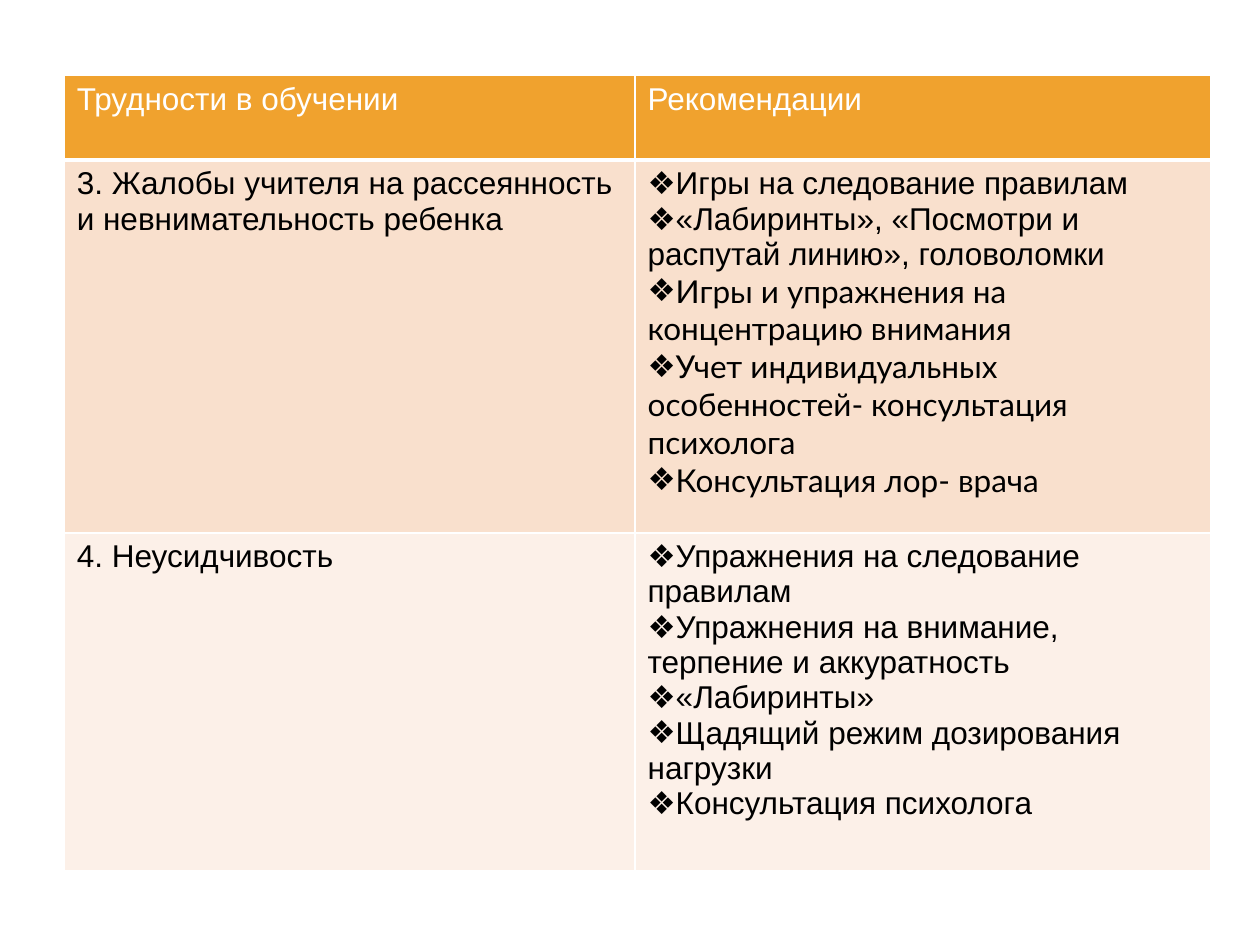
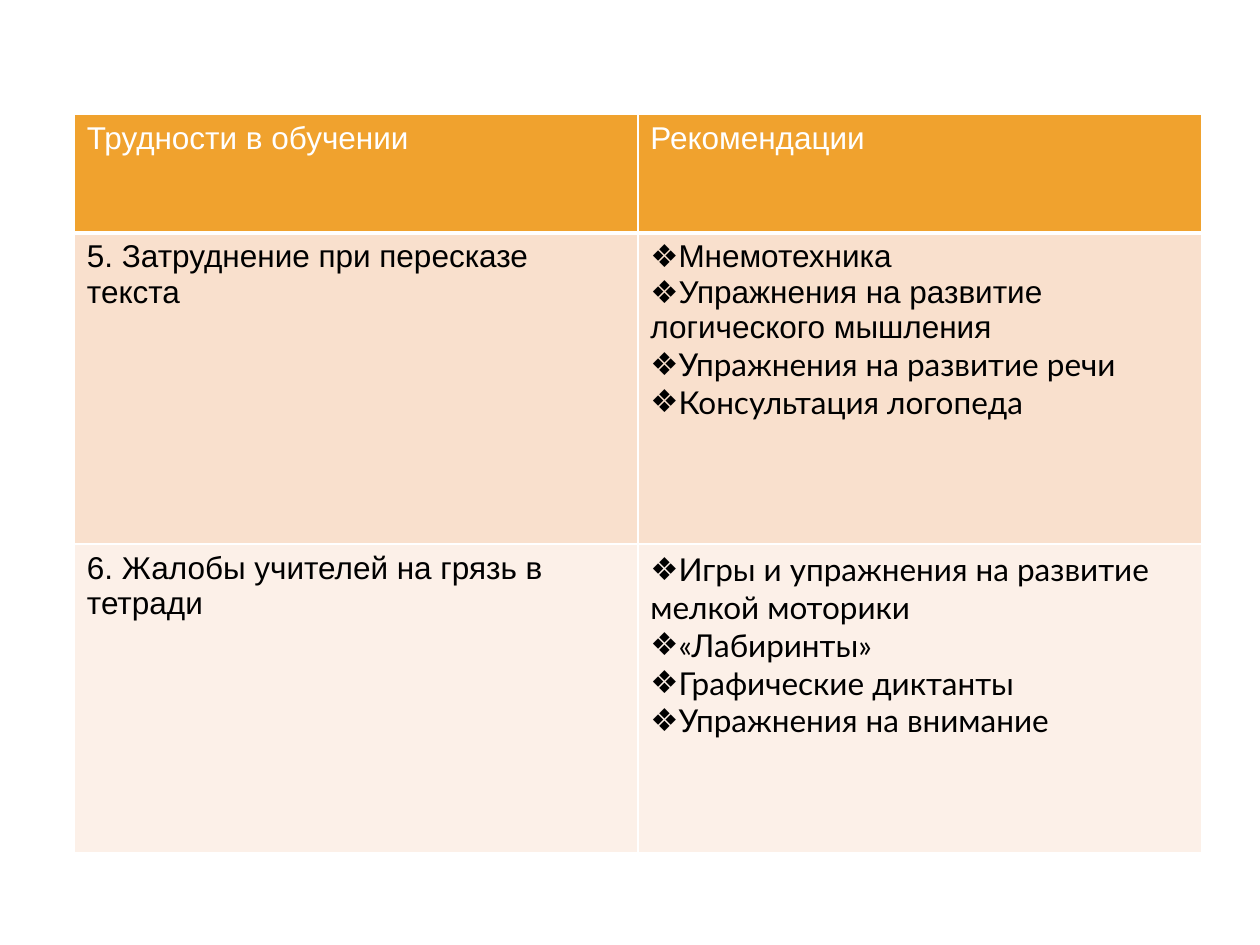
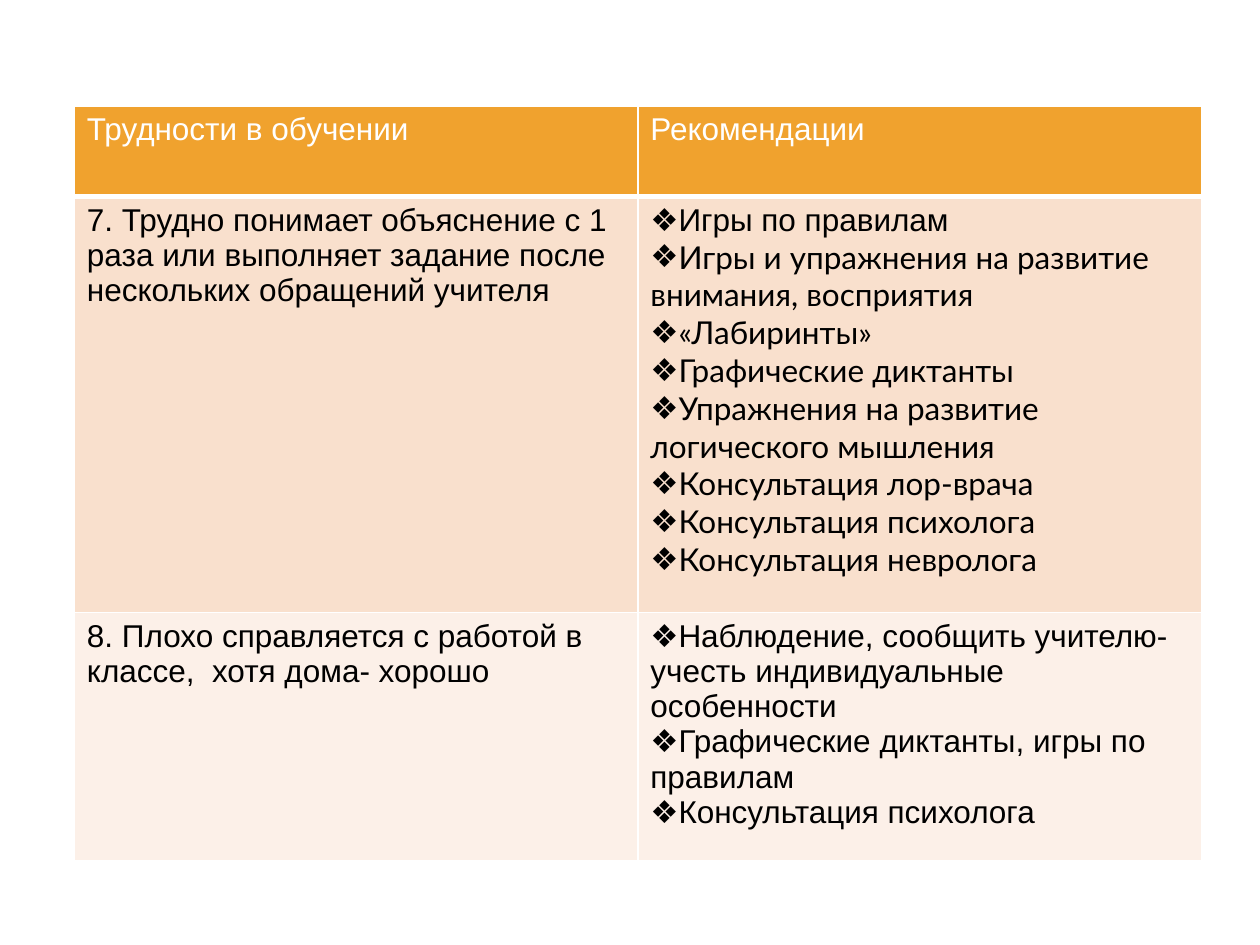
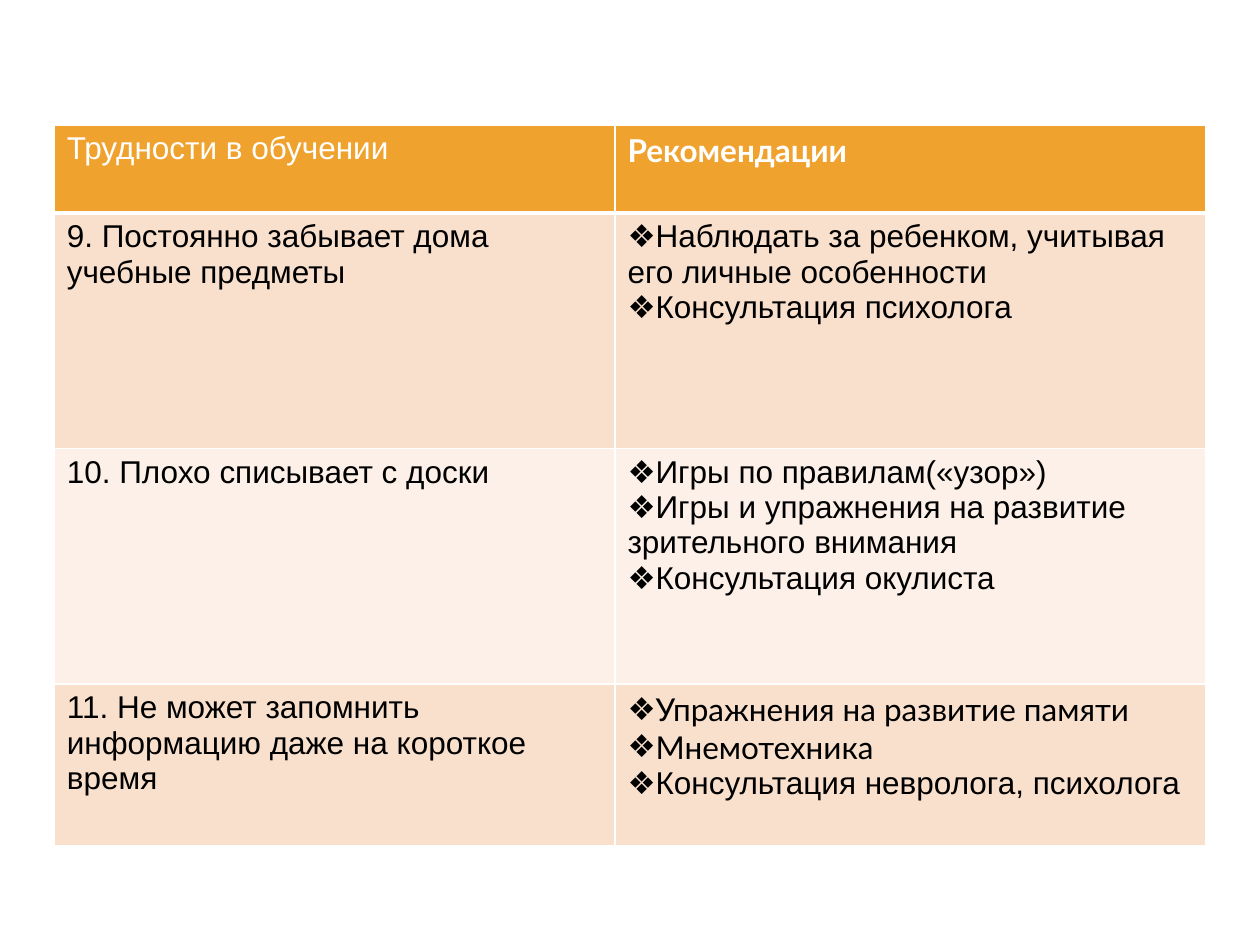
"""Build four slides of tables on learning difficulties and recommendations."""
from lxml import etree
from pptx import Presentation
from pptx.dml.color import RGBColor
from pptx.oxml.ns import qn
from pptx.util import Pt

ARIAL, LATO = "Arial", "Lato"
WHITE, BLACK = "FFFFFF", "000000"
HEADER, BANDS = "F0A22E", ("F9E0CD", "FCF0E8")
BULLET = "❖"
BLANK = 6

TABLES = [
    dict(left=36.7, top=43.2, cols=(326.2, 329), rows=(48.2, 213.1, 193), body=[
        ("3. Жалобы учителя на рассеянность и невнимательность ребенка", [
            (ARIAL, ["Игры на следование правилам",
                     "«Лабиринты», «Посмотри и распутай линию», головоломки"]),
            (LATO, ["Игры и упражнения на концентрацию внимания",
                    "Учет индивидуальных особенностей- консультация психолога",
                    "Консультация лор- врача"])]),
        ("4. Неусидчивость", [
            (ARIAL, ["Упражнения на следование правилам",
                     "Упражнения на внимание, терпение и аккуратность",
                     "«Лабиринты»",
                     "Щадящий режим дозирования нагрузки",
                     "Консультация психолога"])]),
    ]),
    dict(left=42.5, top=65.5, cols=(322, 322), rows=(67.7, 177.8, 176.4), body=[
        ("5. Затруднение при пересказе текста", [
            (ARIAL, ["Мнемотехника", "Упражнения на развитие логического мышления"]),
            (LATO, ["Упражнения на развитие речи", "Консультация логопеда"])]),
        ("6. Жалобы учителей на грязь в тетради", [
            (LATO, ["Игры и упражнения на развитие мелкой моторики",
                    "«Лабиринты»",
                    "Графические диктанты",
                    "Упражнения на внимание"])]),
    ]),
    dict(left=42.5, top=60.5, cols=(322, 322), rows=(51.8, 237.6, 141.8), body=[
        ("7. Трудно понимает объяснение с 1 раза или выполняет задание "
         "после нескольких обращений учителя", [
            (ARIAL, ["Игры по правилам"]),
            (LATO, ["Игры и упражнения на развитие внимания, восприятия",
                    "«Лабиринты»",
                    "Графические диктанты",
                    "Упражнения на развитие логического мышления",
                    "Консультация лор-врача",
                    "Консультация психолога",
                    "Консультация невролога"])]),
        ("8. Плохо справляется с работой в классе,  хотя дома- хорошо", [
            (ARIAL, ["Наблюдение, сообщить учителю- учесть индивидуальные особенности",
                     "Графические диктанты, игры по правилам",
                     "Консультация психолога"])]),
    ]),
    dict(left=31, top=71.3, cols=(320.4, 337.7), rows=(50.4, 134.6, 134.6, 92.2),
         heading=dict(font=LATO, bold=True), body=[
        ("9. Постоянно забывает дома учебные предметы", [
            (ARIAL, ["Наблюдать за ребенком, учитывая его личные особенности",
                     "Консультация психолога"])]),
        ("10. Плохо списывает с доски", [
            (ARIAL, ["Игры по правилам(«узор»)",
                     "Игры и упражнения на развитие зрительного внимания",
                     "Консультация окулиста"])]),
        ("11. Не может запомнить информацию даже на короткое время", [
            (LATO, ["Упражнения на развитие памяти", "Мнемотехника"]),
            (ARIAL, ["Консультация невролога, психолога"])]),
    ]),
]


def rgb(color):
    """Turn a hex string into a colour."""
    return RGBColor.from_string(color)


def write(p, text, font=ARIAL, size=18, color=BLACK, bold=False, bullet=None):
    """Write formatted text into a paragraph."""
    r = p.add_run()
    r.text = text
    r.font.name, r.font.size, r.font.bold = font, Pt(size), bold
    r.font.color.rgb = rgb(color)
    if bullet:
        pPr = p._p.get_or_add_pPr()
        etree.SubElement(pPr, qn("a:buFont"), typeface=ARIAL)
        etree.SubElement(pPr, qn("a:buChar"), char=bullet)


class Deck:
    """Hold the presentation, its style and the current slide."""

    def __init__(self):
        """Start a 10 by 7.5 inch presentation."""
        self.prs = Presentation()
        self.prs.slide_width, self.prs.slide_height = Pt(720), Pt(540)

    def slide(self):
        """Add a blank slide and make it current."""
        self.s = self.prs.slides.add_slide(self.prs.slide_layouts[BLANK])

    def cell(self, cell, fill, bottom=1):
        """Give a cell its white borders and its fill."""
        tcPr = cell._tc.get_or_add_tcPr()
        for side, width in dict(L=1, R=1, T=1, B=bottom).items():
            ln = etree.SubElement(tcPr, qn(f"a:ln{side}"), w=str(Pt(width)))
            solid = etree.SubElement(ln, qn("a:solidFill"))
            etree.SubElement(solid, qn("a:srgbClr"), val=WHITE)
        cell.fill.solid()
        cell.fill.fore_color.rgb = rgb(fill)
        return cell.text_frame

    def bullets(self, tf, groups):
        """Fill a text frame with bulleted items grouped by font."""
        items = [(font, text) for font, texts in groups for text in texts]
        for i, (font, text) in enumerate(items):
            p = tf.add_paragraph() if i else tf.paragraphs[0]
            write(p, text, font=font, bullet=BULLET)

    def table(self, left, top, cols, rows, body, heading=None):
        """Add a table of difficulties and recommendations."""
        table = self.s.shapes.add_table(
            len(rows), len(cols), Pt(left), Pt(top), Pt(sum(cols)), Pt(sum(rows))).table
        for col, width in zip(table.columns, cols):
            col.width = Pt(width)
        for row, height in zip(table.rows, rows):
            row.height = Pt(height)
        titles = (("Трудности в обучении", {}), ("Рекомендации", heading or {}))
        for i, (title, style) in enumerate(titles):
            tf = self.cell(table.cell(0, i), HEADER, bottom=3)
            write(tf.paragraphs[0], title, color=WHITE, **style)
        for i, (difficulty, advice) in enumerate(body):
            fill = BANDS[i % len(BANDS)]
            tf = self.cell(table.cell(i + 1, 0), fill)
            write(tf.paragraphs[0], difficulty)
            self.bullets(self.cell(table.cell(i + 1, 1), fill), advice)


def main():
    """Build and save the slides."""
    deck = Deck()
    for table in TABLES:
        deck.slide()
        deck.table(**table)
    deck.prs.save("out.pptx")


if __name__ == "__main__":
    main()
